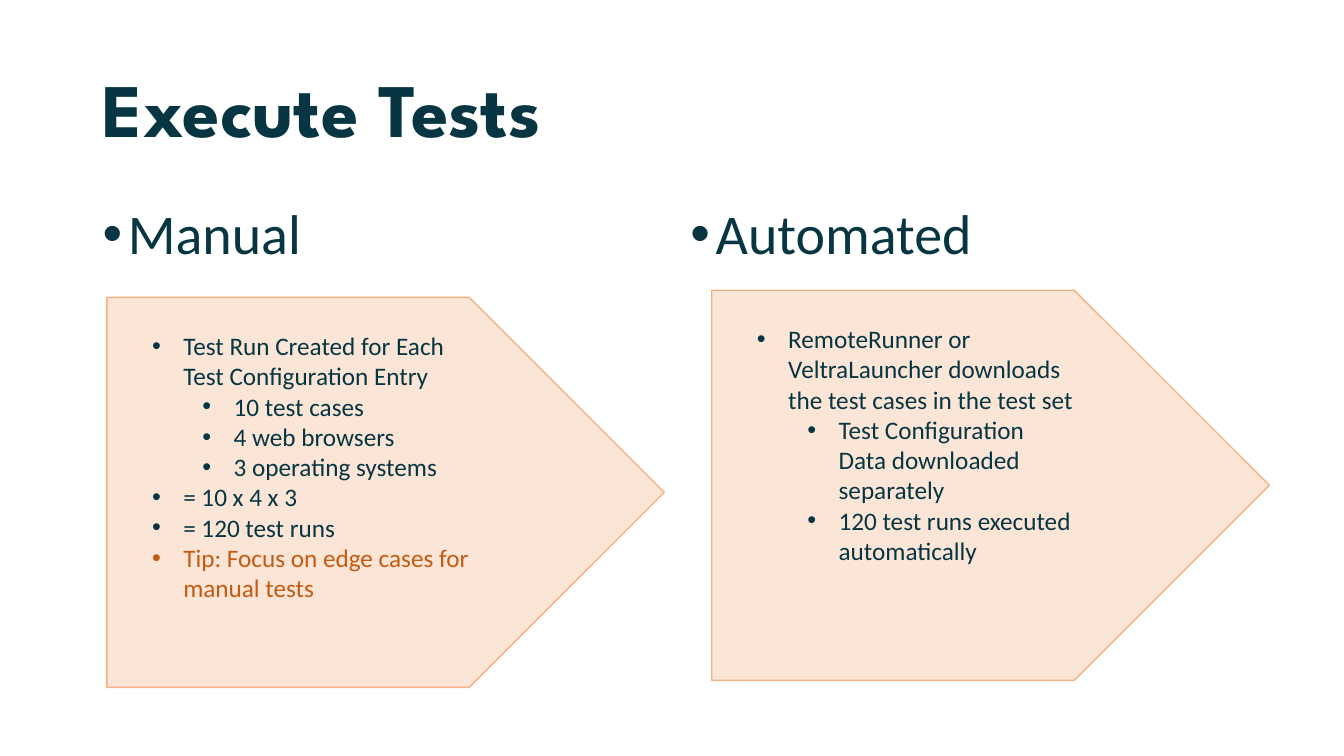
from lxml import etree
from pptx import Presentation
from pptx import util as u
from pptx.dml.color import RGBColor
from pptx.enum import shapes, text
from pptx.oxml.ns import qn

INK, TIP, PEACH, EDGE = "073642", "C55A11", "FBE5D6", "F4B183"

MANUAL = [
    ("Test Run Created for Each Test Configuration Entry", 0, INK),
    ("10 test cases", 1, INK),
    ("4 web browsers", 1, INK),
    ("3 operating systems", 1, INK),
    ("= 10 x 4 x 3", 0, INK),
    ("= 120 test runs", 0, INK),
    ("Tip: Focus on edge cases for manual tests", 0, TIP),
]
AUTOMATED = [
    ("RemoteRunner or VeltraLauncher downloads the test cases in the test set", 0, INK),
    ("Test Configuration Data downloaded separately", 1, INK),
    ("120 test runs executed automatically", 1, INK),
]


def color(hex_code):
    return RGBColor.from_string(hex_code)


def add_text(slide, left, top, width, height):
    box = slide.shapes.add_textbox(*map(u.Inches, (left, top, width, height)))
    box.text_frame.word_wrap = True
    return box.text_frame


def style(paragraph, size, font="Calibri", ink=INK, bold=False):
    paragraph.font.size = u.Pt(size)
    paragraph.font.bold = bold
    for run in paragraph.runs:
        run.font.size = u.Pt(size)
        run.font.name = font
        run.font.bold = bold
        run.font.color.rgb = color(ink)


def add_bullet(paragraph, margin, hanging):
    properties = paragraph._p.get_or_add_pPr()
    properties.set("marL", str(u.Inches(margin)))
    properties.set("indent", str(-u.Inches(hanging)))
    etree.SubElement(properties, qn("a:buFont")).set("typeface", "Arial")
    etree.SubElement(properties, qn("a:buChar")).set("char", "•")


def add_title(slide, left, top, width, height):
    frame = add_text(slide, left, top, width, height)
    frame.vertical_anchor = text.MSO_ANCHOR.MIDDLE
    title = frame.paragraphs[0]
    title.text = "Execute Tests"
    title.line_spacing = 0.9
    style(title, 54, "League Spartan", bold=True)


def add_heading(slide, wording, left, top, width, height):
    heading = add_text(slide, left, top, width, height).paragraphs[0]
    heading.text = wording
    add_bullet(heading, 0.25, 0.25)
    heading.line_spacing = 0.9
    style(heading, 40)


def add_arrow_panel(slide, points, left, top, width, height):
    arrow = slide.shapes.add_shape(
        shapes.MSO_SHAPE.PENTAGON, *map(u.Inches, (left, top, width, height)))
    arrow.shadow.inherit = False
    arrow.fill.solid()
    arrow.fill.fore_color.rgb = color(PEACH)
    arrow.line.color.rgb = color(EDGE)
    arrow.line.width = u.Pt(1)

    frame = add_text(slide, left + 0.35, top + 0.28, 3.36, height - 0.44)
    for index, (wording, level, ink) in enumerate(points):
        point = frame.add_paragraph() if index else frame.paragraphs[0]
        point.text = wording
        point.level = level
        add_bullet(point, 0.31 + 0.5 * level, 0.31)
        style(point, 18, ink=ink)


def build_slide(deck):
    slide = deck.slides.add_slide(deck.slide_layouts[6])
    add_title(slide, 0.92, 0.4, 11.5, 1.45)
    add_heading(slide, "Manual", 0.92, 2, 5.67, 0.8)
    add_heading(slide, "Automated", 6.75, 2, 5.67, 0.8)
    add_arrow_panel(slide, MANUAL, 1.06, 2.95, 5.53, 3.87)
    add_arrow_panel(slide, AUTOMATED, 7.06, 2.88, 5.53, 3.87)


def main():
    deck = Presentation()
    deck.slide_width = u.Inches(13.33)
    deck.slide_height = u.Inches(7.5)
    build_slide(deck)
    deck.save("out.pptx")


if __name__ == "__main__":
    main()
